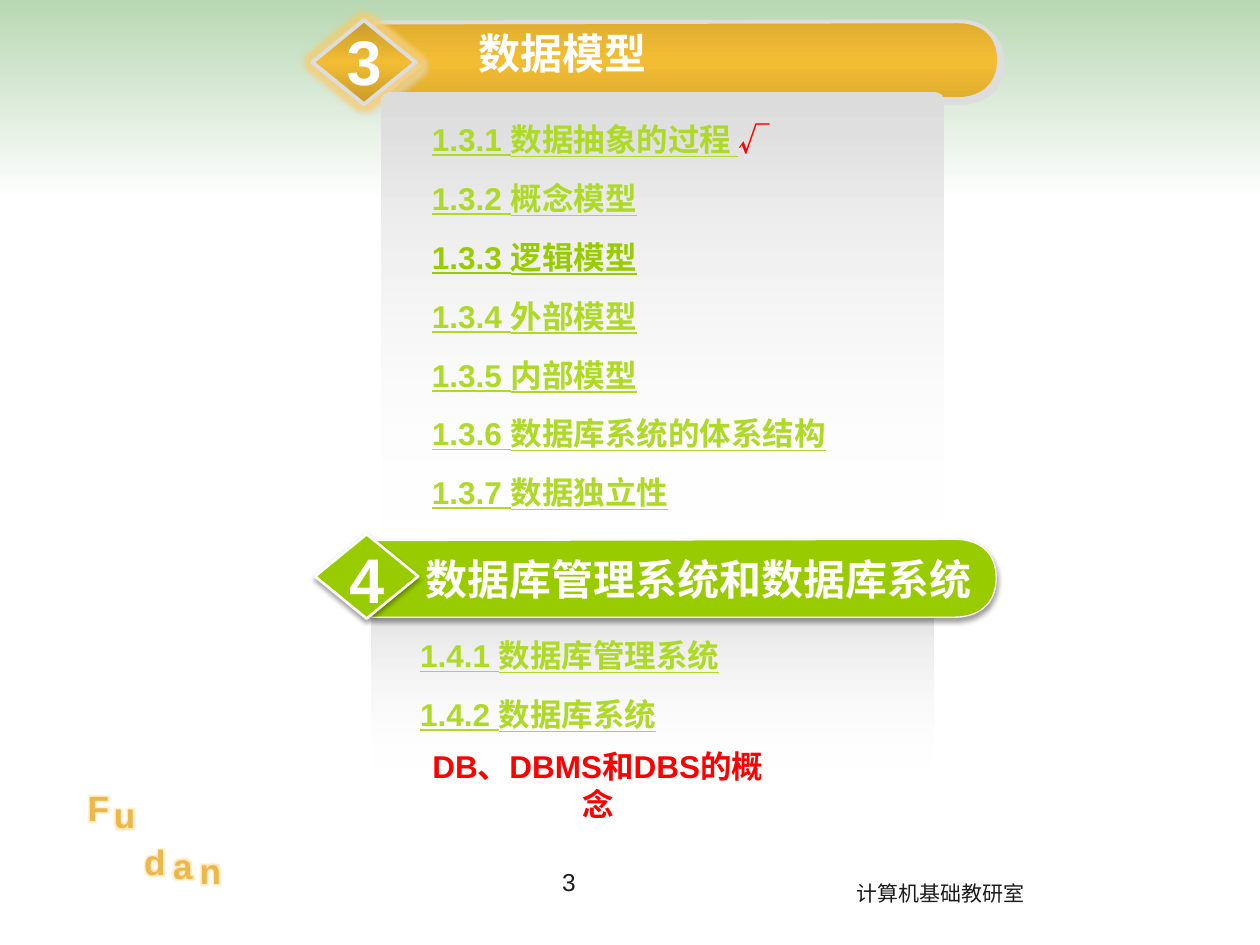
from lxml import etree
from pptx import Presentation
from pptx.dml.color import RGBColor
from pptx.enum.shapes import MSO_SHAPE
from pptx.enum.text import MSO_ANCHOR, MSO_AUTO_SIZE, PP_ALIGN
from pptx.oxml import parse_xml
from pptx.oxml.ns import nsdecls, qn
from pptx.util import Pt

LEFT, CENTER, RIGHT = PP_ALIGN.LEFT, PP_ALIGN.CENTER, PP_ALIGN.RIGHT
TOP, MIDDLE = MSO_ANCHOR.TOP, MSO_ANCHOR.MIDDLE
NO_FIT = MSO_AUTO_SIZE.NONE
RECT, ROUND_RECT, DIAMOND = MSO_SHAPE.RECTANGLE, MSO_SHAPE.ROUNDED_RECTANGLE, MSO_SHAPE.DIAMOND

WHITE = RGBColor(0xFF, 0xFF, 0xFF)
BLACK = RGBColor(0, 0, 0)
INK = RGBColor(0x1C, 0x1C, 0x1C)
SILVER = RGBColor(0xDD, 0xDD, 0xDD)
RED = RGBColor(0xFF, 0, 0)
FOREST = RGBColor(0x4E, 0x9D, 0x41)
GREEN = RGBColor(0x99, 0xCC, 0)
LIME = RGBColor(0xAE, 0xD9, 0x25)
GOLD = RGBColor(0xF3, 0xBD, 0x33)
GOLD_MID = RGBColor(0xE0, 0xAE, 0x2F)
GOLD_DARK = RGBColor(0xC7, 0x9B, 0x2A)
AMBER = RGBColor(0xEC, 0xB7, 0x4B)
GLOW = RGBColor(0xFF, 0xC8, 0x50)

HEADING = {"name": "Arial", "size": Pt(24), "bold": True}
NUMBER = {"name": "Arial", "size": Pt(36), "bold": True}
ITEM = {"name": "Arial", "size": Pt(18), "bold": True}


def color_xml(color, alpha):
    return f'<a:srgbClr val="{color}"><a:alpha val="{alpha * 1000}"/></a:srgbClr>'


def shadow_xml(color, alpha, blur, dist, angle):
    return (f'<a:outerShdw blurRad="{Pt(blur)}" dist="{Pt(dist)}" dir="{angle * 60000}" '
            f'algn="ctr" rotWithShape="0">{color_xml(color, alpha)}</a:outerShdw>')


def glow_xml(color, alpha, radius):
    return f'<a:glow rad="{Pt(radius)}">{color_xml(color, alpha)}</a:glow>'


def effects(inner):
    return parse_xml(f'<a:effectLst {nsdecls("a")}>{inner}</a:effectLst>')


TEXT_SHADOW = shadow_xml(BLACK, 50, 2, 2.5, 45)


def paint(sp, fill, line=None, effect=""):
    """fill is one colour or a list of (position, colour, opacity) from top to bottom."""
    spPr = sp.element.spPr
    if isinstance(fill, list):
        sp.fill.background()
        stops = "".join(f'<a:gs pos="{pos * 1000}">{color_xml(color, alpha)}</a:gs>'
                        for pos, color, alpha in fill)
        spPr.replace(spPr.find(qn("a:noFill")), parse_xml(
            f'<a:gradFill {nsdecls("a")} rotWithShape="1"><a:gsLst>{stops}</a:gsLst>'
            '<a:lin ang="5400000" scaled="0"/></a:gradFill>'))
    else:
        sp.fill.solid()
        sp.fill.fore_color.rgb = fill
    if line:
        sp.line.color.rgb, sp.line.width = line[0], Pt(line[1])
    else:
        sp.line.fill.background()
    sp.shadow.inherit = False
    spPr.replace(spPr.find(qn("a:effectLst")), effects(effect))


def add_run(p, text, color, fmt, effect=""):
    r = p.add_run()
    r.text = text
    r.font.color.rgb = color
    for name, value in fmt.items():
        setattr(r.font, name, value)
    if effect:
        fill = r._r.rPr.find(qn("a:solidFill"))
        fill.addnext(effects(effect))
    return r


def write(sp, box, text, color, fmt, align=CENTER, effect=""):
    sp.left, sp.top, sp.width, sp.height = map(Pt, box)
    tf = sp.text_frame
    for name, value in {"word_wrap": True, "auto_size": NO_FIT, "vertical_anchor": TOP}.items():
        setattr(tf, name, value)
    p = tf.paragraphs[0]
    p.alignment = align
    return add_run(p, text, color, fmt, effect)


def add_label(s, box, *args, **kwargs):
    sp = s.shapes.add_textbox(*map(Pt, box))
    return sp, write(sp, box, *args, **kwargs)


def bezier(p0, p1, p2, p3, steps=12):
    for i in range(1, steps + 1):
        t = i / steps
        weights = ((1 - t) ** 3, 3 * t * (1 - t) ** 2, 3 * t * t * (1 - t), t ** 3)
        yield tuple(sum(w * pt[k] for w, pt in zip(weights, (p0, p1, p2, p3))) for k in (0, 1))


def add_ribbon(s, x, y):
    """Bar with a square left end and a rounded right end."""
    points = [(0, 44.5), (333.4, 44.5),
              *bezier((333.4, 44.5), (342.5, 44.5), (356.5, 40.5), (357, 22.5)),
              *bezier((357, 22.5), (357, 5), (344.5, 0), (333.4, 0))]
    builder = s.shapes.build_freeform(Pt(x), Pt(y + 0.7))
    builder.add_line_segments([(Pt(x + px), Pt(y + py)) for px, py in points])
    return builder.convert_to_shape()


def add_banner(s, ribbon_at, diamond_at, number, number_top, look):
    paint(add_ribbon(s, *ribbon_at), *look["ribbon"])
    x, y = diamond_at
    diamond = s.shapes.add_shape(DIAMOND, *map(Pt, (x, y, 59, 48.2)))
    paint(diamond, *look["diamond"])
    add_label(s, (x + 10.5, number_top, 38.2, 51), number, WHITE, NUMBER, effect=TEXT_SHADOW)


def add_panel(s, box, items):
    """Fading panel with underlined entries; an entry is (text, colour, mark)."""
    sp = s.shapes.add_shape(ROUND_RECT, *map(Pt, box))
    sp.adjustments[0] = 0.02
    paint(sp, [(0, SILVER, 100), (100, WHITE, 0)])
    tf = sp.text_frame
    tf.word_wrap, tf.vertical_anchor = True, MIDDLE
    for i, (text, color, mark) in enumerate(items):
        p = tf.add_paragraph() if i else tf.paragraphs[0]
        p.alignment = LEFT
        p.space_before, p.space_after = Pt(6 if i else 0), Pt(6)
        pPr = p._p.get_or_add_pPr()
        pPr.set("marL", "0")
        pPr.set("indent", str(Pt(20)))
        add_run(p, text, color, {**ITEM, "underline": True})
        if mark:
            add_run(p, mark, RED, ITEM)


def add_letters(s):
    letters = {"F": (22.3, 445.7), "u": (37.4, 450), "d": (54.7, 476.6),
               "a": (70.6, 478.8), "n": (86.4, 481.7)}
    for letter, (x, y) in letters.items():
        add_label(s, (x, y, 67.7, 31.7), letter, AMBER, {**HEADING, "size": Pt(20)},
                  effect=glow_xml(GLOW, 40, 5))


def add_footer(s):
    _, r = add_label(s, (482.4, 499.7, 123, 21.6), "计算机基础教研室", INK,
                     {"name": "Noto Sans CJK JP", "size": Pt(12)}, LEFT)
    ea = etree.Element(qn("a:ea"), typeface="Noto Sans CJK JP")
    r._r.rPr.find(qn("a:latin")).addnext(ea)
    add_label(s, (241.2, 491.8, 167.8, 37.4), "3", INK, {"name": "Arial", "size": Pt(14)})


def main():
    prs = Presentation()
    prs.slide_width, prs.slide_height = Pt(720), Pt(540)
    s = prs.slides.add_slide(prs.slide_layouts[5])

    # Background band, corner letters and footer
    band = s.shapes.add_shape(RECT, 0, 0, Pt(720), Pt(113))
    paint(band, [(0, FOREST, 40), (100, WHITE, 40)])
    add_letters(s)
    add_footer(s)

    # Section 3
    rim, soft = (SILVER, 2.25), shadow_xml(SILVER, 100, 0, 2.8, 45)
    gold = {"ribbon": ([(0, GOLD_MID, 100), (50, GOLD, 100), (100, GOLD_MID, 100)], rim, soft),
            "diamond": ([(0, GOLD_DARK, 100), (50, GOLD, 100), (100, GOLD_DARK, 100)], rim,
                        glow_xml(GLOW, 60, 6) + soft)}
    add_banner(s, (214, 12.2), (178.5, 11.5), "3", 9.4, gold)
    title = s.shapes.title
    write(title, (227.5, 12.2, 188, 36), "数据模型", WHITE, HEADING, effect=TEXT_SHADOW)
    s.shapes._spTree.append(title.element)  # bring the title above the ribbon
    add_panel(s, (218.2, 52.6, 321, 255.6), [
        ("1.3.1 数据抽象的过程 ", LIME, "√"),
        ("1.3.2 概念模型", LIME, ""),
        ("1.3.3 逻辑模型", GREEN, ""),
        ("1.3.4 外部模型", LIME, ""),
        ("1.3.5 内部模型", LIME, ""),
        ("1.3.6 数据库系统的体系结构", LIME, ""),
        ("1.3.7 数据独立性", LIME, "")])

    # Section 4
    add_panel(s, (212.4, 339.1, 321, 104.4), [
        ("1.4.1 数据库管理系统", LIME, ""),
        ("1.4.2 数据库系统", LIME, "")])
    drop = shadow_xml(BLACK, 38, 3.1, 1.8, 90)
    green = {"ribbon": (GREEN, (WHITE, 0.75), drop), "diamond": (GREEN, (WHITE, 1.5), drop)}
    add_banner(s, (212.4, 308.2), (180, 305.3), "4", 305.3, green)
    add_label(s, (208, 312.5, 354.3, 36), "数据库管理系统和数据库系统", WHITE, HEADING, RIGHT,
              TEXT_SHADOW)
    note, _ = add_label(s, (238.3, 423.4, 224, 28.8), "DB、DBMS和DBS的概念", RED, ITEM)
    note.text_frame.margin_left, note.text_frame.margin_right = Pt(4.3), Pt(21.6)

    prs.save("out.pptx")


if __name__ == "__main__":
    main()
